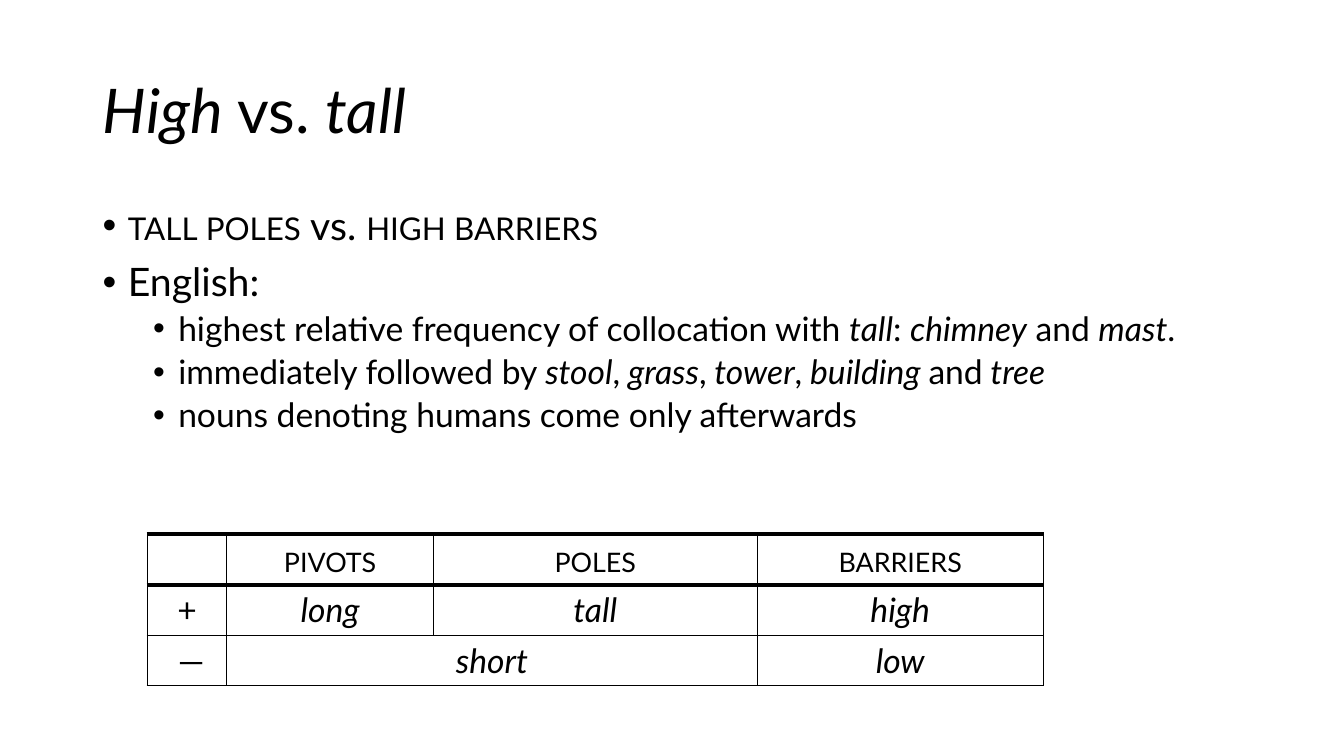
"""Build the "High vs. tall" slide with its bullet list and adjective table."""
from lxml.etree import SubElement
from pptx import Presentation
from pptx.dml.color import RGBColor
from pptx.enum.text import MSO_ANCHOR, MSO_AUTO_SIZE, PP_ALIGN
from pptx.oxml.ns import qn
from pptx.util import Inches, Pt

COLORS = {"ink": "000000", "paper": "FFFFFF"}


def write_runs(para, runs, size):
    """Fill a paragraph with (text, style) runs; style is plain, italic or small."""
    para.font.name = "Lato"
    para.font.size = Pt(size)
    para.font.color.rgb = RGBColor.from_string(COLORS["ink"])
    for text, style in runs:
        span = para.add_run()
        span.text = text
        if style == "italic":
            span.font.italic = True
        elif style == "small":
            span.font._element.set("cap", "small")


def set_border(cell, side, width):
    """Draw one side of a table cell."""
    line = SubElement(cell._tc.get_or_add_tcPr(), qn(f"a:ln{side}"), w=str(Pt(width)))
    fill = SubElement(line, qn("a:solidFill"))
    SubElement(fill, qn("a:srgbClr"), val=COLORS["ink"])


deck = Presentation()
deck.slide_width = Inches(13.33)
deck.slide_height = Inches(7.5)
page = deck.slides.add_slide(deck.slide_layouts[5])
page.background.fill.solid()
page.background.fill.fore_color.rgb = RGBColor.from_string(COLORS["paper"])

title = page.shapes.title
title.left, title.top = Inches(0.92), Inches(0.4)
title.width, title.height = Inches(11.5), Inches(1.45)
title.text_frame.auto_size = MSO_AUTO_SIZE.NONE
title.text_frame.vertical_anchor = MSO_ANCHOR.MIDDLE
heading = title.text_frame.paragraphs[0]
heading.alignment = PP_ALIGN.LEFT
heading.line_spacing = 0.9
write_runs(heading, [("High", "italic"), (" vs. ", "plain"), ("tall", "italic")], 44)

bullets = [
    (0, [("tall poles", "small"), (" vs. ", "plain"), ("high barriers", "small")]),
    (0, [("English:", "plain")]),
    (1, [("highest relative frequency of collocation with ", "plain"), ("tall", "italic"),
         (": ", "plain"), ("chimney", "italic"), (" and ", "plain"), ("mast", "italic"),
         (".", "plain")]),
    (1, [("immediately followed by ", "plain"), ("stool", "italic"), (",", "plain"),
         (" grass", "italic"), (",", "plain"), (" tower", "italic"), (",", "plain"),
         (" building ", "italic"), ("and", "plain"), (" tree", "italic")]),
    (1, [("nouns denoting humans come only afterwards", "plain")]),
]
box = page.shapes.add_textbox(Inches(0.92), Inches(2), Inches(11.5), Inches(4.76))
frame = box.text_frame
frame.word_wrap = True
for index, (level, runs) in enumerate(bullets):
    para = frame.add_paragraph() if index else frame.paragraphs[0]
    para.level = level
    para.line_spacing = 0.9
    para.space_before = Pt(5 if level else 10)
    write_runs(para, runs, 24 if level else 28)
    properties = para._p.get_or_add_pPr()
    properties.set("marL", str(Inches(0.25 + 0.5 * level)))
    properties.set("indent", str(Inches(-0.25)))
    bullet_font = SubElement(properties, qn("a:buFont"), typeface="Arial")
    bullet = SubElement(properties, qn("a:buChar"), char="•")
    properties.find(qn("a:defRPr")).addprevious(bullet_font)
    bullet_font.addnext(bullet)

rows = [
    ("small", ["", "pivots", "poles", "barriers"]),
    ("italic", ["+", "long", "tall", "high"]),
    ("italic", [" —", "short", "", "low"]),
]
column_widths = [0.79, 2.05, 3.21, 2.84]
table = page.shapes.add_table(
    len(rows), len(column_widths), Inches(1.46), Inches(5.3), Inches(8.89), Inches(1.5)
).table
table.first_row = False
table.horz_banding = False
for column, width in zip(table.columns, column_widths):
    column.width = Inches(width)
for row_index, (style, words) in enumerate(rows):
    table.rows[row_index].height = Inches(0.5)
    for column_index, word in enumerate(words):
        cell = table.cell(row_index, column_index)
        top_width = 3 if row_index < 2 else 1
        bottom_width = 3 if row_index == 0 else 1
        for side, width in zip("LRTB", (1, 1, top_width, bottom_width)):
            set_border(cell, side, width)
        cell.fill.background()
        para = cell.text_frame.paragraphs[0]
        para.alignment = PP_ALIGN.CENTER
        runs = [(word, style if column_index else "plain")] if word else []
        write_runs(para, runs, 24)
table.cell(2, 1).merge(table.cell(2, 2))

deck.save("out.pptx")
